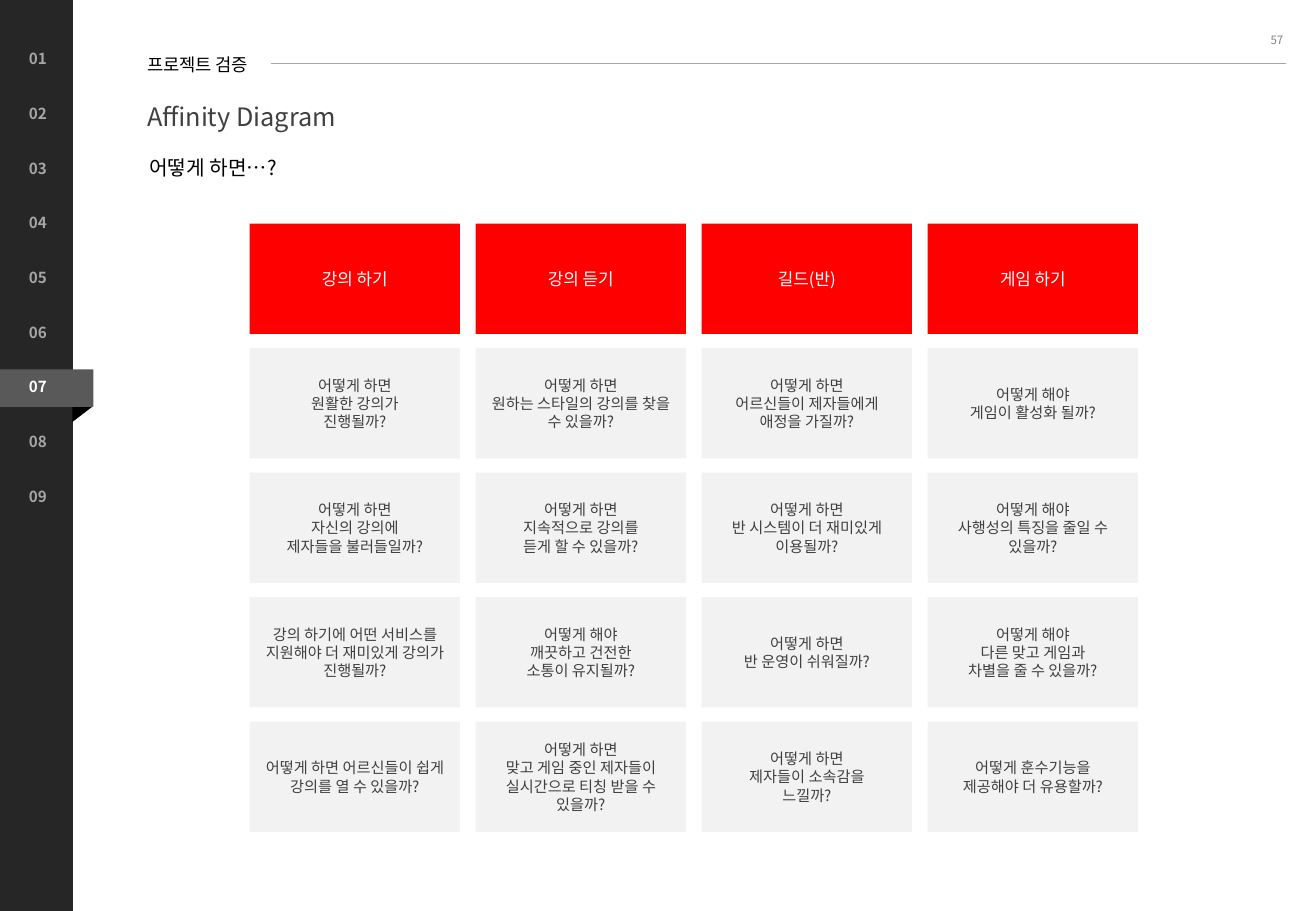
from pptx import Presentation
from pptx.dml.color import RGBColor
from pptx.enum.shapes import MSO_CONNECTOR, MSO_SHAPE
from pptx.enum.text import MSO_ANCHOR, MSO_AUTO_SIZE, PP_ALIGN
from pptx.oxml.ns import qn
from pptx.util import Pt
from lxml.etree import SubElement

EMU_PER_PX = 4572
FONT = "Noto Sans CJK KR"
SLIDE_WIDTH, SLIDE_HEIGHT = 2166, 1500
CELL_LEFT, CELL_TOP = 411, 368
CELL_WIDTH, CELL_HEIGHT = 346, 182
COLUMN_STEP, ROW_STEP = 372, 205
CHAPTER_TOP, CHAPTER_STEP = 72, 90
CHAPTERS, CURRENT_CHAPTER = 9, 7

HEADER_FORMAT = {"size": Pt(10), "color": "FFFFFF"}
CELL_FORMAT = {"size": Pt(9), "color": "404040"}
CHAPTER_FORMAT = {"size": Pt(9), "bold": True, "color": "A6A6A6"}
CURRENT_FORMAT = {**CHAPTER_FORMAT, "color": "FFFFFF"}

COLUMNS = {
    "강의 하기": [
        ["어떻게 하면", "원활한 강의가", "진행될까?"],
        ["어떻게 하면", "자신의 강의에", "제자들을 불러들일까?"],
        ["강의 하기에 어떤 서비스를 지원해야 더 재미있게 강의가 진행될까?"],
        ["어떻게 하면 어르신들이 쉽게 강의를 열 수 있을까?"],
    ],
    "강의 듣기": [
        ["어떻게 하면", "원하는 스타일의 강의를 찾을 수 있을까?"],
        ["어떻게 하면", "지속적으로 강의를", "듣게 할 수 있을까?"],
        ["어떻게 해야", "깨끗하고 건전한", "소통이 유지될까?"],
        ["어떻게 하면", "맞고 게임 중인 제자들이 실시간으로 티칭 받을 수 있을까?"],
    ],
    "길드(반)": [
        ["어떻게 하면", "어르신들이 제자들에게 애정을 가질까?"],
        ["어떻게 하면", "반 시스템이 더 재미있게 이용될까?"],
        ["어떻게 하면", "반 운영이 쉬워질까?"],
        ["어떻게 하면", "제자들이 소속감을", "느낄까?"],
    ],
    "게임 하기": [
        ["어떻게 해야", "게임이 활성화 될까?"],
        ["어떻게 해야", "사행성의 특징을 줄일 수 있을까?"],
        ["어떻게 해야", "다른 맞고 게임과", "차별을 줄 수 있을까?"],
        ["어떻게 훈수기능을", "제공해야 더 유용할까?"],
    ],
}


def px(*lengths):
    return [length * EMU_PER_PX for length in lengths]


def color(hex_value):
    return RGBColor.from_string(hex_value)


def set_values(target, values):
    for name, value in values.items():
        setattr(target, name, value)


def write(frame, lines, text_format, align=PP_ALIGN.LEFT, line_spacing=None):
    font_values = {"name": FONT, **text_format}
    hex_value = font_values.pop("color")
    for index, line in enumerate(lines):
        para = frame.add_paragraph() if index else frame.paragraphs[0]
        set_values(para, {"alignment": align, "line_spacing": line_spacing})
        span = para.add_run()
        span.text = line
        set_values(span.font, font_values)
        span.font.color.rgb = color(hex_value)
        SubElement(span.font._element, qn("a:ea"), typeface=FONT)


def add_text(page, area, line, text_format, frame_values=None, **paragraph):
    frame = page.shapes.add_textbox(*px(*area)).text_frame
    set_values(frame, {"word_wrap": True, **(frame_values or {})})
    write(frame, [line], text_format, **paragraph)


def add_block(page, area, fill, kind=MSO_SHAPE.RECTANGLE, rotation=0):
    block = page.shapes.add_shape(kind, *px(*area))
    block.shadow.inherit = False
    block.rotation = rotation
    block.fill.solid()
    block.fill.fore_color.rgb = color(fill)
    block.line.fill.background()
    return block


def add_cell(page, column, row, fill, lines, text_format):
    left = CELL_LEFT + column * COLUMN_STEP
    top = CELL_TOP + row * ROW_STEP
    cell = add_block(page, (left, top, CELL_WIDTH, CELL_HEIGHT), fill)
    set_values(cell.text_frame, {"word_wrap": True, "vertical_anchor": MSO_ANCHOR.MIDDLE})
    write(cell.text_frame, lines, text_format, PP_ALIGN.CENTER)


def add_sidebar(page):
    add_block(page, (0, 0, 120, SLIDE_HEIGHT), "262626")
    add_block(page, (110, 652, 52, 34), "000000", MSO_SHAPE.ISOSCELES_TRIANGLE, 90)
    add_block(page, (0, 608, 154, 62), "595959")
    for chapter in range(1, CHAPTERS + 1):
        top = CHAPTER_TOP + (chapter - 1) * CHAPTER_STEP
        text_format = CURRENT_FORMAT if chapter == CURRENT_CHAPTER else CHAPTER_FORMAT
        add_text(page, (28, top, 102, 50), f"{chapter:02}", text_format)


def add_title(page):
    title = page.shapes.title
    left, top, width, height = px(242, 152, 354, 64)
    set_values(title, {"left": left, "top": top, "width": width, "height": height})
    set_values(title.text_frame, {
        "margin_left": 0, "margin_top": 0, "margin_right": 0, "margin_bottom": 0,
        "word_wrap": False, "vertical_anchor": MSO_ANCHOR.TOP,
        "auto_size": MSO_AUTO_SIZE.NONE,
    })
    write(title.text_frame, ["Affinity Diagram"], {"size": Pt(15), "color": "404040"},
          line_spacing=Pt(23.2))


def add_rule(page):
    rule = page.shapes.add_connector(MSO_CONNECTOR.STRAIGHT, *px(446, 105, 2116, 105))
    rule.line.color.rgb = color("A6A6A6")
    rule.line.width = Pt(0.5)
    SubElement(rule._element.spPr, qn("a:effectLst"))


def add_headings(page):
    margin, small_margin = px(14, 8)
    add_text(page, (1644, 26, 488, 80), "57", {"size": Pt(6.8), "color": "808080"},
             {"vertical_anchor": MSO_ANCHOR.MIDDLE}, align=PP_ALIGN.RIGHT)
    add_text(page, (228, 84, 326, 48), "프로젝트 검증", {"size": Pt(10.5), "color": "000000"},
             {"margin_left": margin, "margin_right": margin,
              "margin_top": small_margin, "margin_bottom": small_margin},
             line_spacing=0.9)
    add_title(page)
    add_text(page, (226, 246, 382, 122), "어떻게 하면…?", {"size": Pt(12), "color": "000000"})
    add_rule(page)


def add_diagram(page):
    for column, (header, questions) in enumerate(COLUMNS.items()):
        add_cell(page, column, 0, "FF0000", [header], HEADER_FORMAT)
        for row, lines in enumerate(questions, start=1):
            add_cell(page, column, row, "F2F2F2", lines, CELL_FORMAT)


def main():
    deck = Presentation()
    deck.slide_width, deck.slide_height = px(SLIDE_WIDTH, SLIDE_HEIGHT)
    page = deck.slides.add_slide(deck.slide_layouts[5])
    add_sidebar(page)
    add_headings(page)
    add_diagram(page)
    deck.save("out.pptx")


if __name__ == "__main__":
    main()
